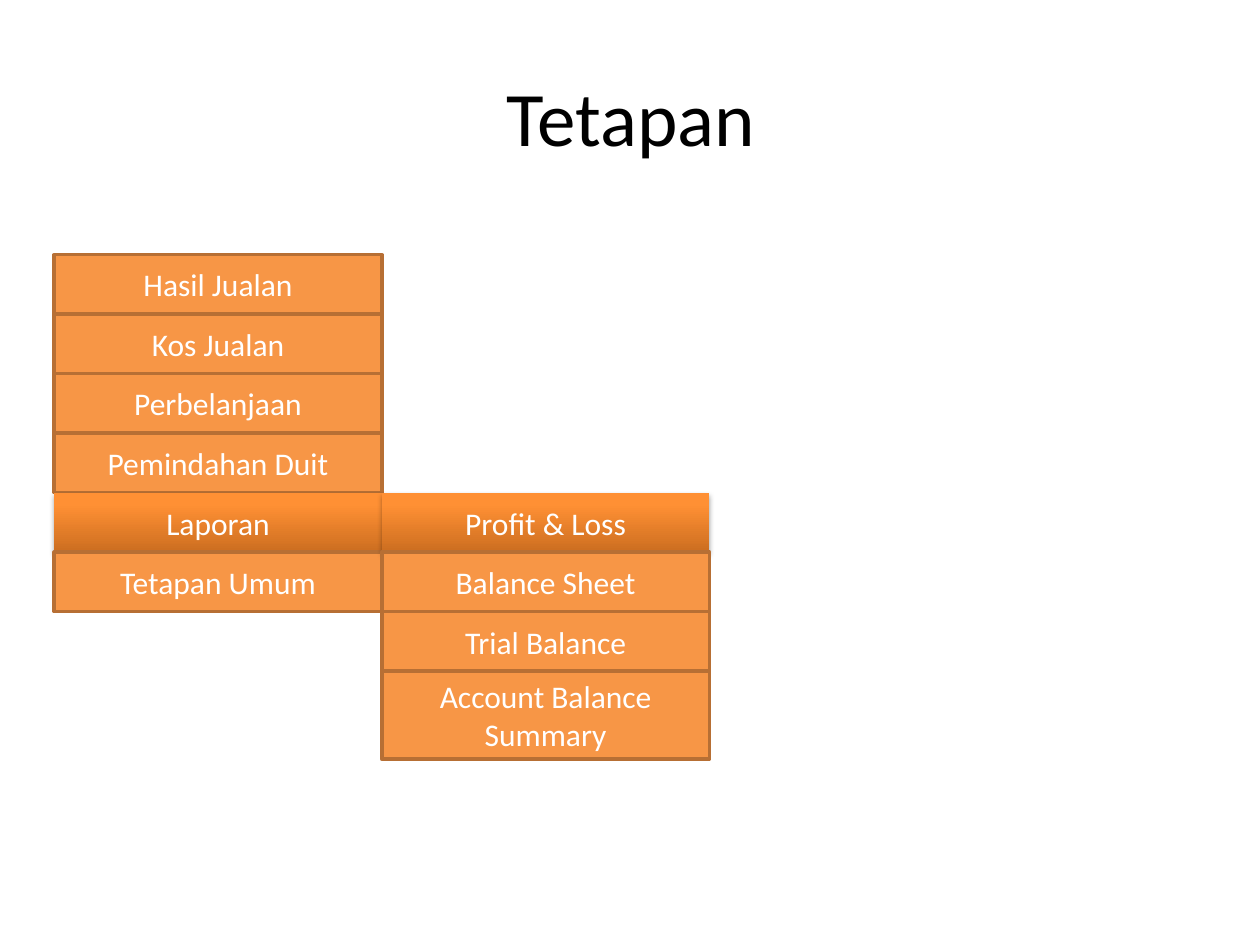
from dataclasses import dataclass

from lxml import etree
from pptx import Presentation
from pptx.dml.color import RGBColor
from pptx.enum.shapes import MSO_SHAPE
from pptx.enum.text import MSO_ANCHOR, PP_ALIGN
from pptx.oxml.ns import qn
from pptx.util import Pt

RECT = MSO_SHAPE.RECTANGLE
MIDDLE = MSO_ANCHOR.MIDDLE
CENTER = PP_ALIGN.CENTER


@dataclass(frozen=True)
class Theme:
    font: str = "Calibri"
    head: int = 44
    body: int = 18
    ink: str = "000000"
    pale: str = "FFFFFF"
    fill: str = "F79646"
    edge: str = "B76F34"
    glow: tuple = ((0, "CC6E20"), (80, "FF9034"), (100, "FF9136"))


class Deck:
    def __init__(self, theme, slide):
        self.theme = theme
        self.slide = slide

    def label(self, shape, text, size, color):
        frame = shape.text_frame
        frame.word_wrap = True
        frame.vertical_anchor = MIDDLE
        line = frame.paragraphs[0]
        line.alignment = CENTER
        run = line.add_run()
        run.text = text
        run.font.name = self.theme.font
        run.font.size = Pt(size)
        run.font.color.rgb = RGBColor.from_string(color)

    def title(self, text, x, y, w, h):
        box = self.slide.shapes.add_textbox(Pt(x), Pt(y), Pt(w), Pt(h))
        self.label(box, text, self.theme.head, self.theme.ink)

    def item(self, text, x, y, w, h, active=False):
        box = self.slide.shapes.add_shape(RECT, Pt(x), Pt(y), Pt(w), Pt(h))
        box.shadow.inherit = False
        if active:
            self.shade(box)
        else:
            box.fill.solid()
            box.fill.fore_color.rgb = RGBColor.from_string(self.theme.fill)
            box.line.color.rgb = RGBColor.from_string(self.theme.edge)
            box.line.width = Pt(2)
        self.label(box, text, self.theme.body, self.theme.pale)

    def shade(self, box):
        box.line.fill.background()
        box.fill.gradient()
        box.fill.gradient_angle = 90
        props = box._element.spPr
        stops = props.find(qn("a:gradFill")).find(qn("a:gsLst"))
        for stop in list(stops):
            stops.remove(stop)
        for place, color in self.theme.glow:
            stop = etree.SubElement(stops, qn("a:gs"), pos=str(place * 1000))
            etree.SubElement(stop, qn("a:srgbClr"), val=color)
        drop = etree.SubElement(
            props.find(qn("a:effectLst")), qn("a:outerShdw"),
            blurRad=str(Pt(3.1)), dist=str(Pt(1.8)), dir="5400000", rotWithShape="0")
        tint = etree.SubElement(drop, qn("a:srgbClr"), val=self.theme.ink)
        etree.SubElement(tint, qn("a:alpha"), val="35000")


def main():
    show = Presentation()
    show.slide_width, show.slide_height = Pt(720), Pt(540)
    deck = Deck(Theme(), show.slides.add_slide(show.slide_layouts[6]))
    deck.title("Tetapan", 36.5, 21, 648, 90)

    left, top, wide, high = 31, 145.5, 187.2, 34
    main_menu = ["Hasil Jualan", "Kos Jualan", "Perbelanjaan",
                 "Pemindahan Duit", "Laporan", "Tetapan Umum"]
    reports = ["Profit & Loss", "Balance Sheet", "Trial Balance",
               "Account Balance Summary"]
    chosen = ("Laporan", "Profit & Loss")
    tall = {"Account Balance Summary": 50.4}
    start = main_menu.index("Laporan")
    for col, (first, names) in enumerate([(0, main_menu), (start, reports)]):
        for row, name in enumerate(names, first):
            deck.item(name, left + col * wide, top + row * high, wide,
                      tall.get(name, high), name in chosen)

    show.save("out.pptx")


if __name__ == "__main__":
    main()
